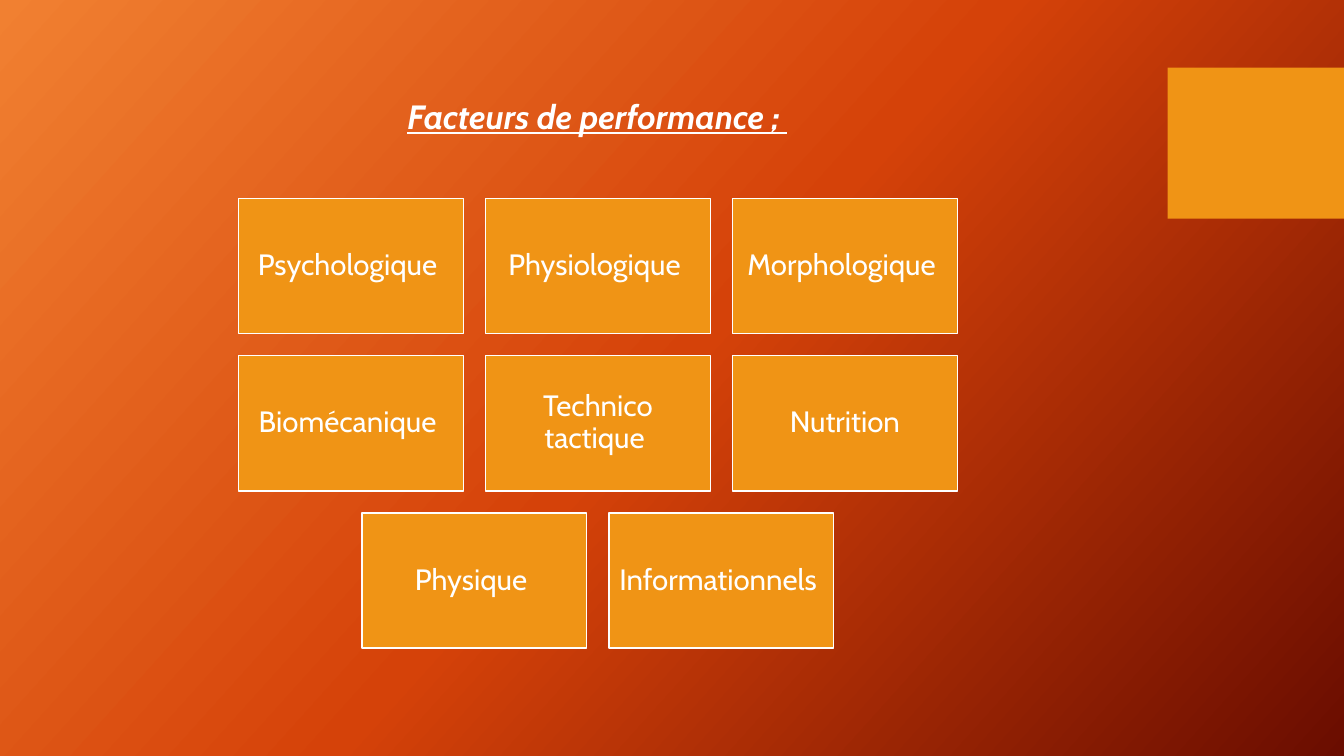
"""Build a slide of performance factors set out as a centred grid of boxes."""
from copy import deepcopy
from dataclasses import dataclass

from pptx import Presentation
from pptx import util as u
from pptx.dml.color import RGBColor
from pptx.enum import shapes, text
from pptx.oxml.ns import qn

WHITE = RGBColor(0xFF, 0xFF, 0xFF)
AMBER = RGBColor(0xF0, 0x94, 0x15)
STOPS = (
    (0, RGBColor(0xF1, 0x80, 0x31)),
    (0.5, RGBColor(0xD5, 0x42, 0x09)),
    (1, RGBColor(0x6A, 0x0D, 0x00)),
)
TITLE = {"size": u.Pt(24), "bold": True, "italic": True, "underline": True}
LABEL = {"size": u.Pt(21)}
ROWS = (
    ("Psychologique ", "Physiologique ", "Morphologique "),
    ("Biomécanique ", "Technico tactique ", "Nutrition"),
    ("Physique ", "Informationnels "),
)
MID, TOP = 5.93, 1.97
COL, ROW = 2.45, 1.56
GAP = 0.22


@dataclass
class Area:
    """Hold a place on the slide in inches."""

    left: float
    top: float
    width: float
    height: float

    def emu(self) -> list[int]:
        """Return the four lengths in slide units."""
        return [u.Inches(n) for n in (self.left, self.top, self.width, self.height)]


@dataclass
class Factor:
    """Hold a label with its column and row in the grid."""

    label: str
    col: float
    row: int

    def area(self) -> Area:
        """Return the box that the grid gives this factor."""
        return Area(MID + self.col * COL + GAP / 2, TOP + self.row * ROW,
                    COL - GAP, ROW - GAP)


def write(shape, words: str, style: dict, inset: float) -> None:
    """Put centred white words in a shape."""
    frame = shape.text_frame
    frame.word_wrap = True
    frame.vertical_anchor = text.MSO_ANCHOR.MIDDLE
    for side in ("left", "top", "right", "bottom"):
        setattr(frame, f"margin_{side}", u.Inches(inset))
    para = frame.paragraphs[0]
    para.alignment = text.PP_ALIGN.CENTER
    para.line_spacing = 0.9
    run = para.add_run()
    run.text = words
    run.font.color.rgb = WHITE
    for name, value in {"name": "Cabin", **style}.items():
        setattr(run.font, name, value)


def block(slide, area: Area):
    """Draw a flat amber rectangle."""
    shape = slide.shapes.add_shape(shapes.MSO_SHAPE.RECTANGLE, *area.emu())
    shape.shadow.inherit = False
    shape.fill.solid()
    shape.fill.fore_color.rgb = AMBER
    shape.line.fill.background()
    return shape


def box(slide, factor: Factor) -> None:
    """Draw a factor as a labelled block with a white edge."""
    shape = block(slide, factor.area())
    shape.line.color.rgb = WHITE
    shape.line.width = u.Pt(1)
    write(shape, factor.label, LABEL, 0.09)


def paint(slide) -> None:
    """Fill the background with the three-stop gradient."""
    fill = slide.background.fill
    fill.gradient()
    fill.gradient_angle = 360 - 42
    stops = slide.element.find(".//" + qn("a:gsLst"))
    stops.insert(1, deepcopy(stops[0]))
    for stop, (place, color) in zip(fill.gradient_stops, STOPS):
        stop.position = place
        stop.color.rgb = color


def main() -> None:
    """Build and save the slide."""
    deck = Presentation()
    deck.slide_width, deck.slide_height = u.Inches(13.33), u.Inches(7.5)
    slide = deck.slides.add_slide(deck.slide_layouts[6])
    paint(slide)
    block(slide, Area(11.58, 0.67, 1.75, 1.5))
    title = slide.shapes.add_textbox(*Area(3.48, 0.62, 4.89, 1.11).emu())
    write(title, "Facteurs de performance ; ", TITLE, 0.1)
    for row, labels in enumerate(ROWS):
        for col, label in enumerate(labels):
            box(slide, Factor(label, col - len(labels) / 2, row))
    deck.save("out.pptx")


if __name__ == "__main__":
    main()
